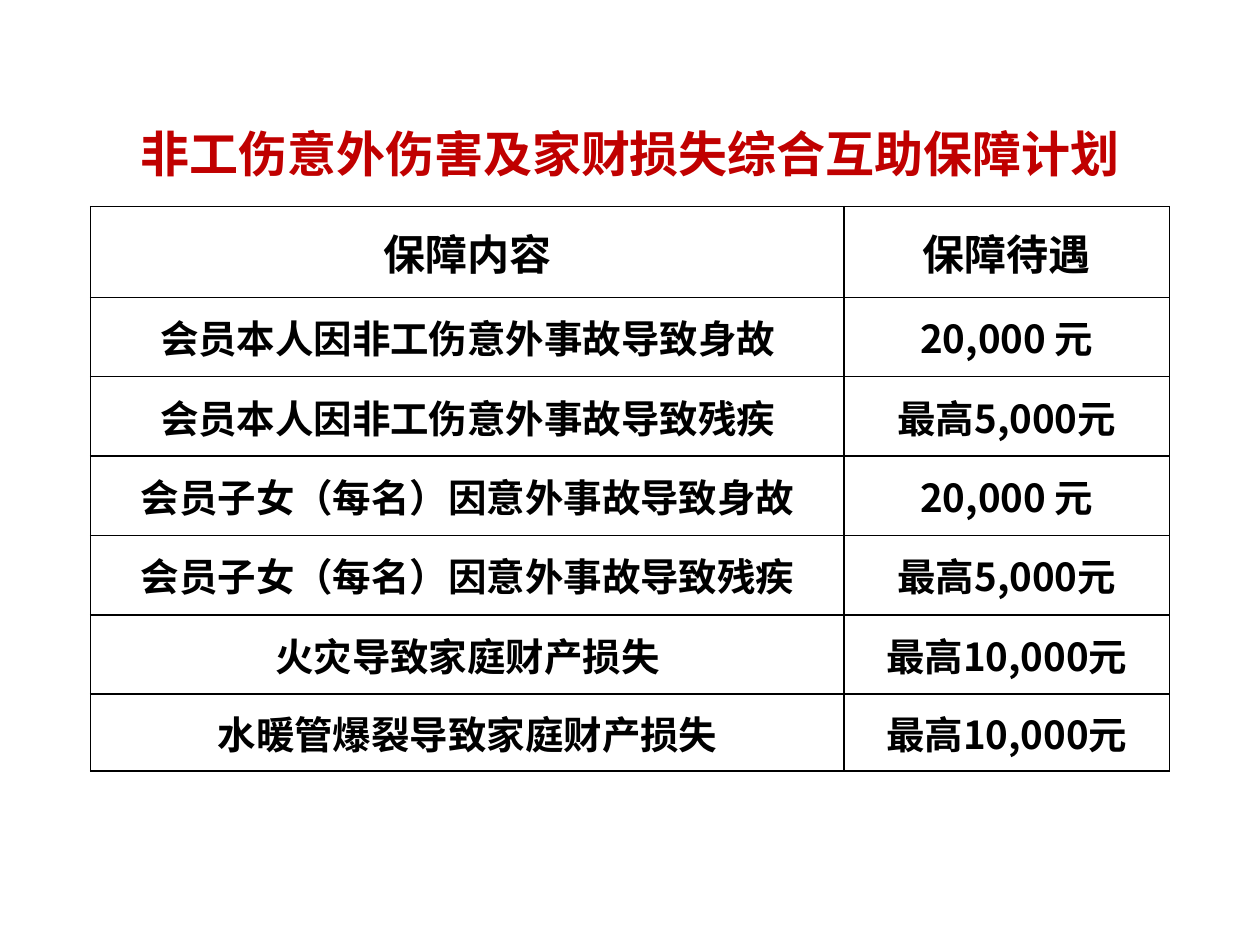
from lxml import etree
from pptx import Presentation
from pptx import util as u
from pptx.dml.color import RGBColor
from pptx.enum import text
from pptx.oxml import ns

COLORS = {"title": "C00000", "ink": "000000"}
CJK = "Noto Sans CJK SC"
LEFT, WIDTH = 0.72, 8.56
COLUMNS = [5.98, 2.58]
HEIGHTS = [0.72] + [0.63] * 5 + [0.61]
ROWS = [
    ("保障内容", "保障待遇"),
    ("会员本人因非工伤意外事故导致身故", "20,000 元"),
    ("会员本人因非工伤意外事故导致残疾", "最高5,000元"),
    ("会员子女（每名）因意外事故导致身故", "20,000 元"),
    ("会员子女（每名）因意外事故导致残疾", "最高5,000元"),
    ("火灾导致家庭财产损失", "最高10,000元"),
    ("水暖管爆裂导致家庭财产损失", "最高10,000元"),
]


class PlanPage:
    """Holds the style and the current slide of the protection plan."""

    def __init__(self, deck):
        self.page = deck.slides.add_slide(deck.slide_layouts[6])

    def fill_text(self, frame, words, size, color, font=CJK):
        frame.text = words
        para = frame.paragraphs[0]
        para.alignment = text.PP_ALIGN.CENTER
        for span in para.runs:
            span.font.size = u.Pt(size)
            span.font.bold = True
            span.font.name = font
            span.font.color.rgb = RGBColor.from_string(COLORS[color])
            properties = span._r.get_or_add_rPr()
            etree.SubElement(properties, ns.qn("a:ea"), typeface=CJK)
        return para

    def title(self, words, top, height):
        box = self.page.shapes.add_textbox(
            u.Inches(LEFT), u.Inches(top), u.Inches(WIDTH), u.Inches(height))
        frame = box.text_frame
        frame.word_wrap = True
        frame.vertical_anchor = text.MSO_ANCHOR.MIDDLE
        self.fill_text(frame, words, 28, "title").line_spacing = 1.2

    def borders(self, cell):
        properties = cell._tc.get_or_add_tcPr()
        for index, side in enumerate("LRTB"):
            line = etree.Element(ns.qn(f"a:ln{side}"), w=str(u.Pt(1)))
            fill = etree.SubElement(line, ns.qn("a:solidFill"))
            etree.SubElement(fill, ns.qn("a:srgbClr"), val=COLORS["ink"])
            properties.insert(index, line)

    def table(self, rows, top):
        grid = self.page.shapes.add_table(
            len(rows), len(COLUMNS), u.Inches(LEFT), u.Inches(top),
            u.Inches(WIDTH), u.Inches(sum(HEIGHTS))).table
        for column, width in zip(grid.columns, COLUMNS):
            column.width = u.Inches(width)
        for index, (row, height, entries) in enumerate(zip(grid.rows, HEIGHTS, rows)):
            row.height = u.Inches(height)
            size, font = (22, CJK) if index else (24, "Arial")
            for cell, words in zip(row.cells, entries):
                cell.fill.background()
                cell.margin_left = cell.margin_right = u.Inches(0.07)
                cell.margin_top = cell.margin_bottom = 0
                cell.vertical_anchor = text.MSO_ANCHOR.MIDDLE
                self.fill_text(cell.text_frame, words, size, "ink", font)
                self.borders(cell)


def main():
    deck = Presentation()
    deck.slide_width, deck.slide_height = u.Inches(10), u.Inches(7.5)
    plan = PlanPage(deck)
    plan.title("非工伤意外伤害及家财损失综合互助保障计划", 0.78, 0.78)
    plan.table(ROWS, 1.64)
    deck.save("out.pptx")


if __name__ == "__main__":
    main()
